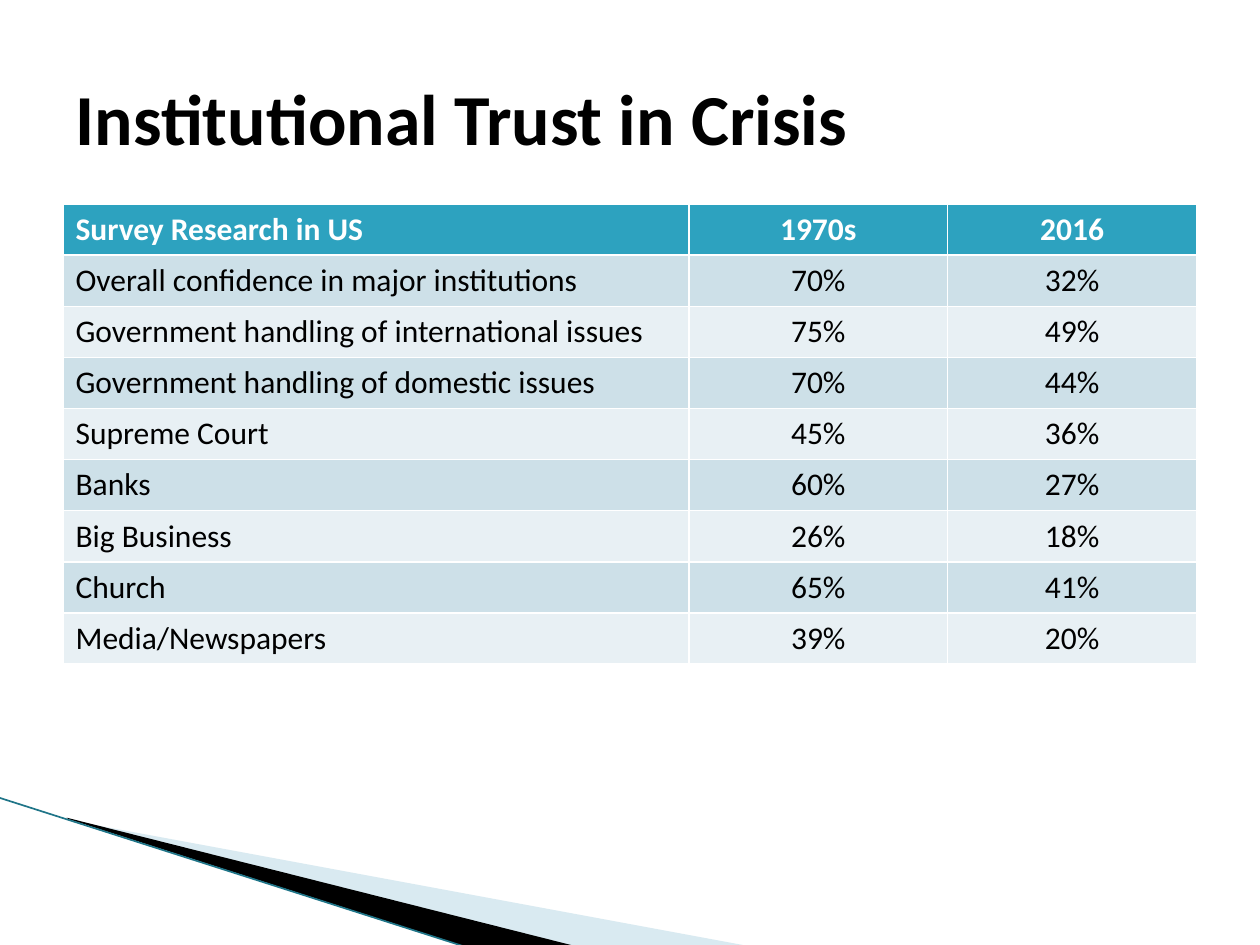
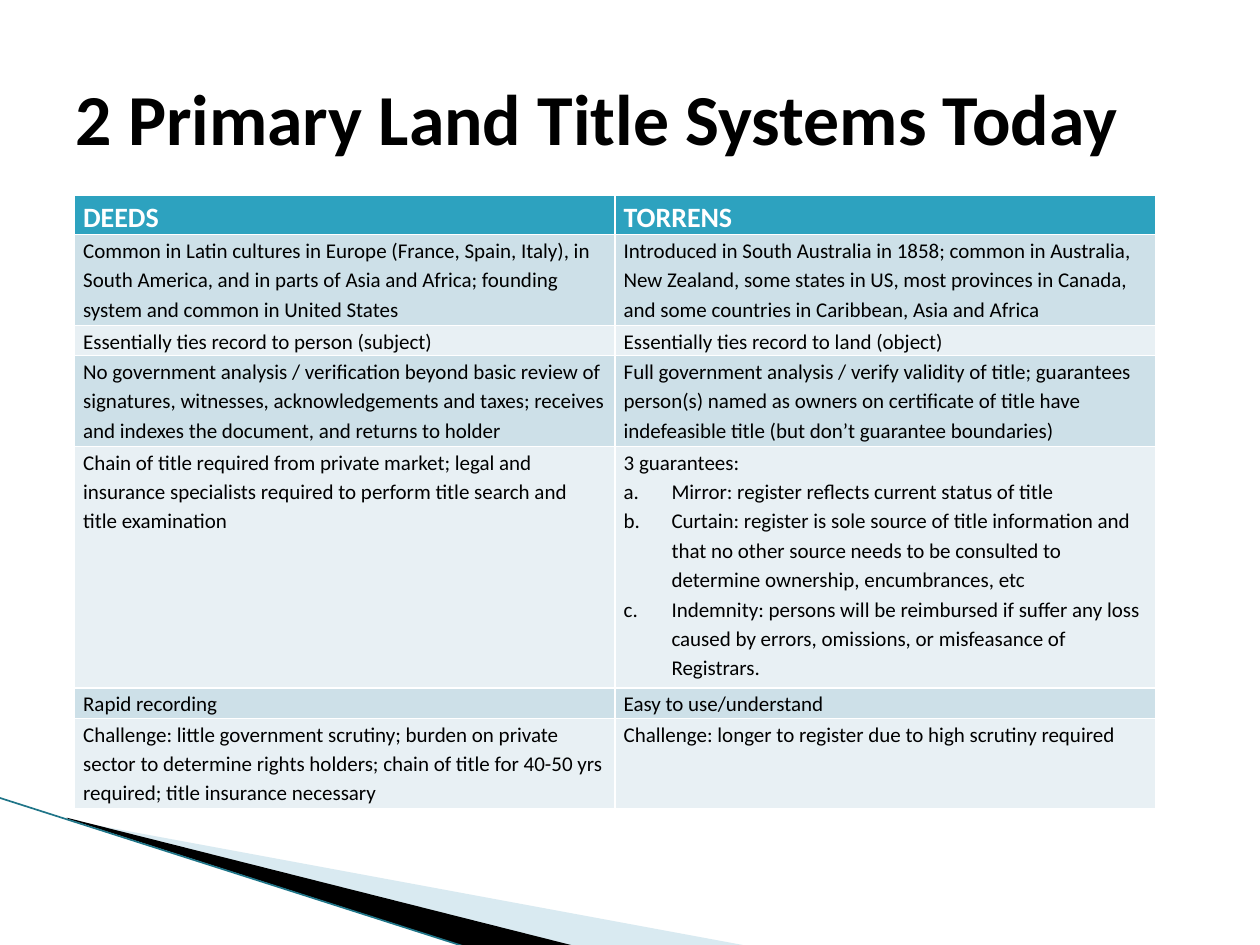
"""Build two slides on institutional trust and land title systems."""
from lxml.etree import SubElement
from pptx import Presentation
from pptx.dml.color import RGBColor
from pptx.enum.text import MSO_ANCHOR, MSO_AUTO_SIZE, PP_ALIGN
from pptx.oxml.ns import qn
from pptx.util import Inches, Pt

HUES = {"black": "000000", "white": "FFFFFF", "head": "2DA2BF", "odd": "CDE0E8",
        "even": "E8F0F4", "pale": "A0CBDC", "line": "1F7588"}
FONT = "Calibri"
WIDE, HIGH = 10, 7.5
TITLE = {"left": 0.5, "top": 0.3, "width": 9, "height": 1.25}
BANDS = [
    ("pale", 40, [(55, 651), (595, 751), (456, 751), (55, 650)]),
    ("black", 100, [(53, 649), (457, 751), (372, 752), (54, 650)]),
]
EDGE = (-0.01, 6.33, 3.71, 7.52)
LINE = 0.24

TRUST = {
    "title": "Institutional Trust in Crisis",
    "at": (0.5, 1.62), "cols": [4.97, 2.05, 1.98], "heights": [3.65 / 9] * 9,
    "sizes": (18, 18), "inset": (0.1, 0.05), "space": 1, "align": PP_ALIGN.CENTER,
    "rows": [
        ("Survey Research in US", "1970s", "2016"),
        ("Overall confidence in major institutions", "70%", "32%"),
        ("Government handling of international issues", "75%", "49%"),
        ("Government handling of domestic issues", "70%", "44%"),
        ("Supreme Court", "45%", "36%"),
        ("Banks", "60%", "27%"),
        ("Big Business", "26%", "18%"),
        ("Church", "65%", "41%"),
        ("Media/Newspapers", "39%", "20%"),
    ],
}
LAND = {
    "title": "2 Primary Land Title Systems Today",
    "at": (0.59, 1.55), "cols": [4.29] * 2,
    "heights": [LINE * n for n in (1, 3, 1, 3, 8, 1, 3)],
    "sizes": (16, 12), "inset": (0.07, 0), "space": 1.15, "align": PP_ALIGN.LEFT,
    "rows": [
        ("DEEDS", "TORRENS"),
        ("Common in Latin cultures in Europe (France, Spain, Italy), in South America, "
         "and in parts of Asia and Africa; founding system and common in United States",
         "Introduced in South Australia in 1858; common in Australia, New Zealand, some "
         "states in US, most provinces in Canada, and some countries in Caribbean, Asia "
         "and Africa"),
        ("Essentially ties record to person (subject)",
         "Essentially ties record to land (object)"),
        ("No government analysis / verification beyond basic review of signatures, "
         "witnesses, acknowledgements and taxes; receives and indexes the document, and "
         "returns to holder",
         "Full government analysis / verify validity of title; guarantees person(s) named "
         "as owners on certificate of title have indefeasible title (but don’t guarantee "
         "boundaries)"),
        ("Chain of title required from private market; legal and insurance specialists "
         "required to perform title search and title examination",
         ["3 guarantees:",
          "Mirror: register reflects current status of title",
          "Curtain: register is sole source of title information and that no other source "
          "needs to be consulted to determine ownership, encumbrances, etc",
          "Indemnity: persons will be reimbursed if suffer any loss caused by errors, "
          "omissions, or misfeasance of Registrars."]),
        ("Rapid recording", "Easy to use/understand"),
        ("Challenge: little government scrutiny; burden on private sector to determine "
         "rights holders; chain of title for 40-50 yrs required; title insurance necessary",
         "Challenge: longer to register due to high scrutiny required"),
    ],
}


def rgb(name):
    """Return a named colour."""
    return RGBColor.from_string(HUES[name])


def apply(item, values):
    """Set each named attribute of an item."""
    for name, value in values.items():
        setattr(item, name, value)


def style(para, size, hue, bold):
    """Set the font of a paragraph."""
    apply(para.font, {"name": FONT, "size": Pt(size), "bold": bold})
    para.font.color.rgb = rgb(hue)


def letter(para):
    """Number a paragraph a., b., c. with a hanging indent."""
    props = para._p.get_or_add_pPr()
    indent = Inches(0.38)
    props.set("marL", str(indent))
    props.set("indent", str(-indent))
    SubElement(props, qn("a:buAutoNum"), type="alphaLcPeriod")


def add_bands(slide):
    """Draw the corner bands and their edge line."""
    for hue, alpha, points in BANDS:
        pen = slide.shapes.build_freeform(*points[0], scale=Inches(0.01))
        pen.add_line_segments(points[1:])
        band = pen.convert_to_shape()
        band.shadow.inherit = False
        band.fill.solid()
        band.fill.fore_color.rgb = rgb(hue)
        band.line.fill.background()
        if alpha < 100:
            tint = band.element.spPr.find(".//" + qn("a:srgbClr"))
            SubElement(tint, qn("a:alpha"), val=str(alpha * 1000))
    edge = slide.shapes.add_connector(1, *map(Inches, EDGE))
    edge.line.color.rgb = rgb("line")
    edge.line.width = Pt(0.95)
    SubElement(edge.element.spPr, qn("a:effectLst"))


def add_title(slide, text):
    """Fill and place the title."""
    title = slide.shapes.title
    apply(title, {side: Inches(size) for side, size in TITLE.items()})
    title.text = text
    apply(title.text_frame, {"word_wrap": True, "auto_size": MSO_AUTO_SIZE.NONE,
                             "vertical_anchor": MSO_ANCHOR.MIDDLE})
    para = title.text_frame.paragraphs[0]
    para.alignment = PP_ALIGN.LEFT
    style(para, 41, "black", True)


def fill_cell(cell, text, row, col, page):
    """Write and format one table cell."""
    side, end = map(Inches, page["inset"])
    apply(cell, {"margin_left": side, "margin_right": side,
                 "margin_top": end, "margin_bottom": end})
    head = row == 0
    cell.fill.solid()
    cell.fill.fore_color.rgb = rgb("head" if head else "odd" if row % 2 else "even")
    parts = [text] if isinstance(text, str) else text
    cell.text = "\n".join(parts)
    for index, para in enumerate(cell.text_frame.paragraphs):
        apply(para, {"line_spacing": page["space"],
                     "alignment": page["align"] if col else PP_ALIGN.LEFT})
        if index:
            letter(para)
        style(para, page["sizes"][0 if head else 1], "white" if head else "black", head)
        apply(para.runs[0].font, {"name": FONT, "bold": head})


def add_grid(slide, page):
    """Add the table of a slide."""
    rows, cols, heights = page["rows"], page["cols"], page["heights"]
    box = (*page["at"], sum(cols), sum(heights))
    table = slide.shapes.add_table(len(rows), len(cols), *map(Inches, box)).table
    for col, width in zip(table.columns, cols):
        col.width = Inches(width)
    for row, height in zip(table.rows, heights):
        row.height = Inches(height)
    for r, texts in enumerate(rows):
        for c, text in enumerate(texts):
            fill_cell(table.cell(r, c), text, r, c, page)


def main():
    """Build and save the deck."""
    deck = Presentation()
    apply(deck, {"slide_width": Inches(WIDE), "slide_height": Inches(HIGH)})
    for page in (TRUST, LAND):
        slide = deck.slides.add_slide(deck.slide_layouts.get_by_name("Title Only"))
        add_bands(slide)
        add_title(slide, page["title"])
        add_grid(slide, page)
    deck.save("out.pptx")


if __name__ == "__main__":
    main()
